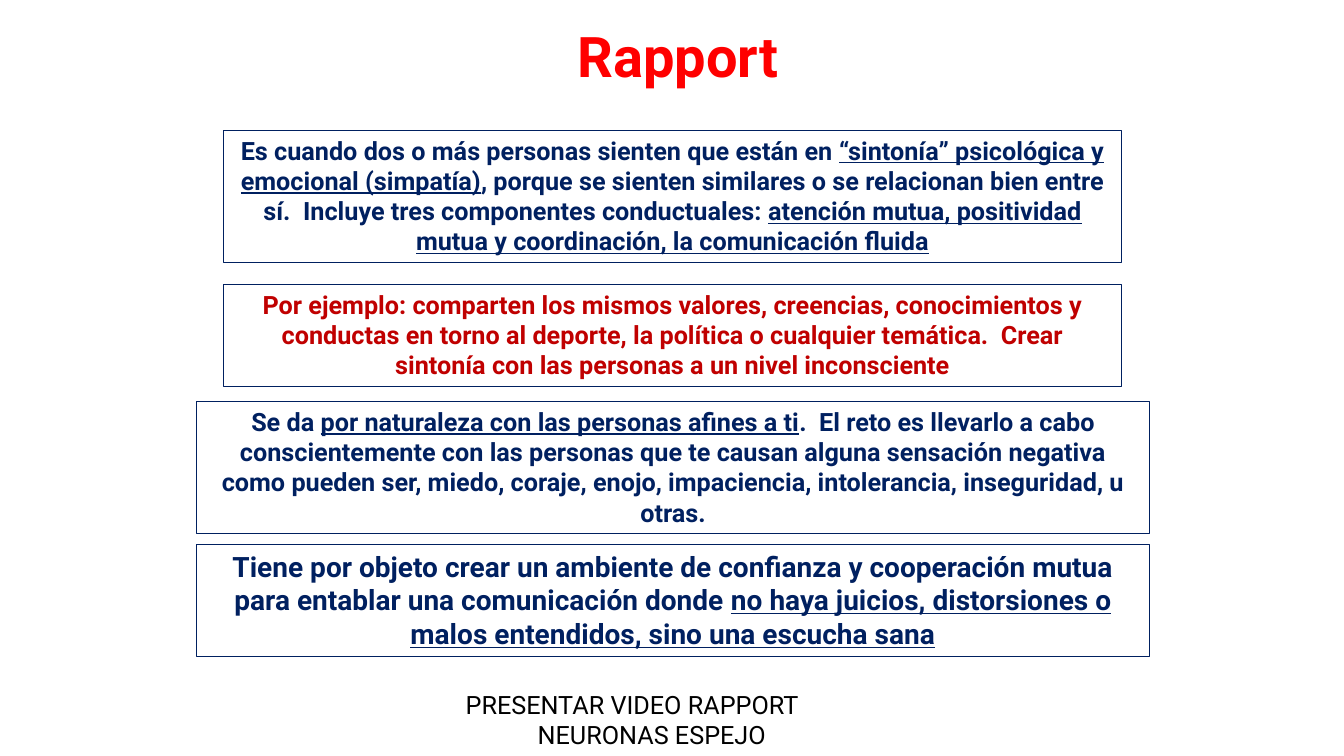
"""Build the slide that explains rapport in four framed statements."""
import pptx
import pptx.dml.color
import pptx.enum.shapes
import pptx.enum.text
import pptx.util

Inches = pptx.util.Inches
ALIGN = pptx.enum.text.PP_ALIGN
NAVY, CRIMSON, RED, BLACK = "002060", "C00000", "FF0000", "000000"


def color(hex_code):
    return pptx.dml.color.RGBColor.from_string(hex_code)


def style(text_frame, size, hex_code, bold, wrap=True):
    text_frame.word_wrap = wrap
    text_frame.auto_size = pptx.enum.text.MSO_AUTO_SIZE.SHAPE_TO_FIT_TEXT
    text_frame.vertical_anchor = pptx.enum.text.MSO_ANCHOR.TOP
    for paragraph in text_frame.paragraphs:
        for run in paragraph.runs:
            run.font.name = "Roboto"
            run.font.size = pptx.util.Pt(size)
            run.font.bold = bold
            run.font.color.rgb = color(hex_code)


presentation = pptx.Presentation()
presentation.slide_width = Inches(13.33)
presentation.slide_height = Inches(7.5)
slide = presentation.slides.add_slide(presentation.slide_layouts[6])

title = slide.shapes.add_textbox(Inches(5.63), Inches(0.16), Inches(2.35), Inches(0.77))
title.text_frame.text = "Rapport"
style(title.text_frame, 40, RED, True, wrap=False)

# Each statement alternates plain and underlined parts, starting with a plain one.
statements = [
    (2.22, 1.29, 8.9, 1.31, 18, NAVY, [
        "Es cuando dos o más personas sienten que están en ",
        "“sintonía” psicológica y emocional (simpatía)",
        ", porque se sienten similares o se relacionan bien entre sí.  "
        "Incluye tres componentes conductuales: ",
        "atención mutua, positividad mutua y coordinación, la comunicación fluida"]),
    (2.22, 2.82, 8.9, 1.01, 18, CRIMSON, [
        "Por ejemplo: comparten los mismos valores, creencias, conocimientos y "
        "conductas en torno al deporte, la política o cualquier temática.  "
        "Crear sintonía con las personas a un nivel inconsciente"]),
    (1.95, 3.98, 9.45, 1.31, 18, NAVY, [
        "Se da ",
        "por naturaleza con las personas afines a ti",
        ".  El reto es llevarlo a cabo conscientemente con las personas que te "
        "causan alguna sensación negativa como pueden ser, miedo, coraje, enojo, "
        "impaciencia, intolerancia, inseguridad, u otras."]),
    (1.95, 5.4, 9.45, 1.11, 20, NAVY, [
        "Tiene por objeto crear un ambiente de confianza y cooperación mutua "
        "para entablar una comunicación donde ",
        "no haya juicios, distorsiones o malos entendidos, sino una escucha sana"]),
]
for left, top, width, height, size, hex_code, parts in statements:
    frame = slide.shapes.add_shape(
        pptx.enum.shapes.MSO_SHAPE.RECTANGLE,
        Inches(left), Inches(top), Inches(width), Inches(height))
    frame.shadow.inherit = False
    frame.fill.background()
    frame.line.color.rgb = color(NAVY)
    frame.line.width = pptx.util.Pt(0.75)
    statement = frame.text_frame.paragraphs[0]
    statement.alignment = ALIGN.CENTER
    for index, part in enumerate(parts):
        run = statement.add_run()
        run.text = part
        run.font.underline = index % 2 == 1
    style(frame.text_frame, size, hex_code, True)

video_note = slide.shapes.add_textbox(Inches(4.3), Inches(6.79), Inches(4.33), Inches(0.71))
video_note.text_frame.text = "PRESENTAR VIDEO RAPPORT\nNEURONAS ESPEJO"
video_line, neurons_line = video_note.text_frame.paragraphs
video_line.alignment = ALIGN.LEFT
video_line._p.get_or_add_pPr().set("marL", str(Inches(0.22)))
neurons_line.alignment = ALIGN.CENTER
style(video_note.text_frame, 18, BLACK, False)

presentation.save("out.pptx")
